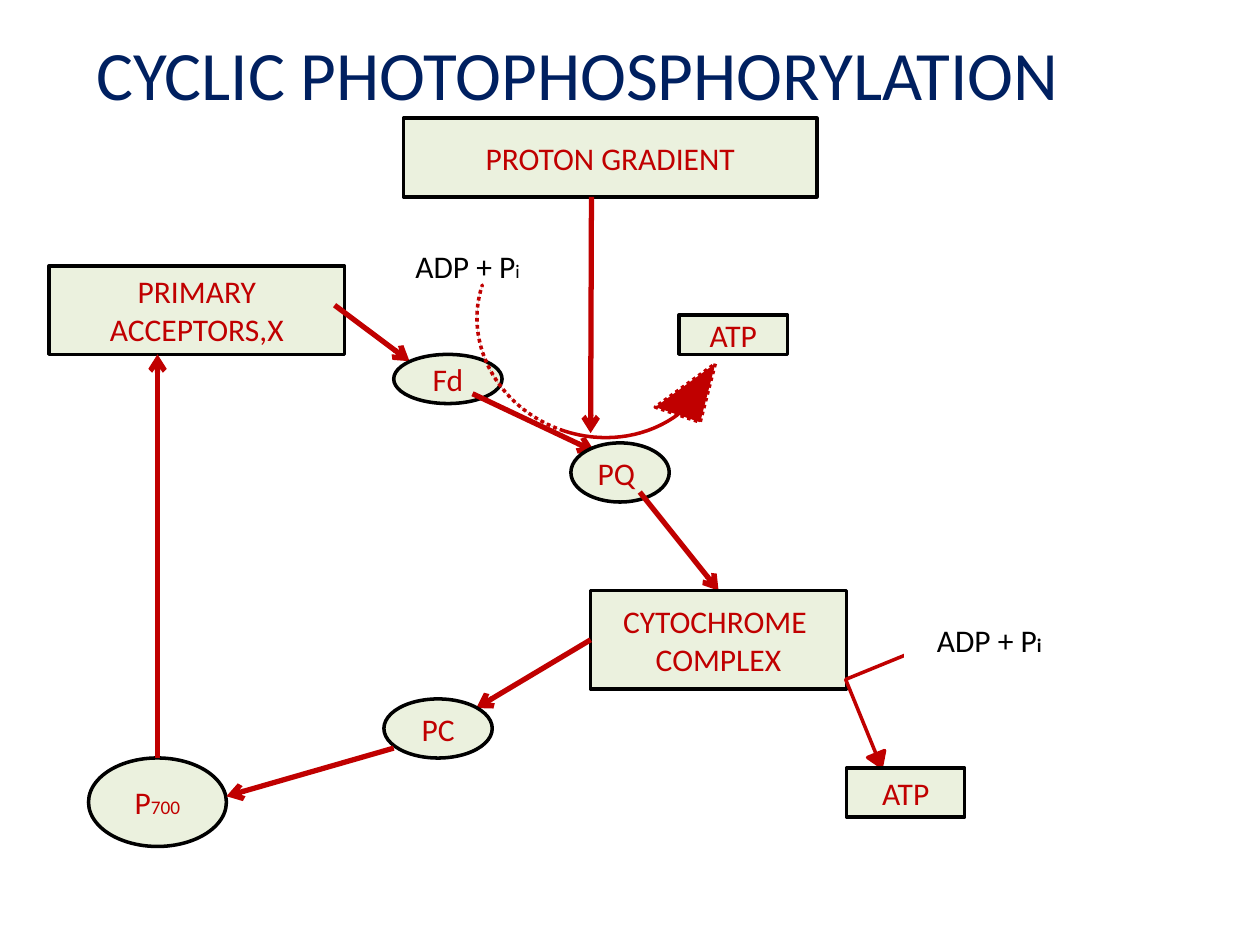
from lxml import etree
from pptx import Presentation
from pptx.dml.color import RGBColor
from pptx.enum import dml, shapes, text
from pptx.oxml import ns
from pptx.util import Pt

COLORS = {"navy": "002060", "red": "C00000", "cream": "EBF1DE",
          "black": "000000", "white": "FFFFFF"}
RGB = {name: RGBColor.from_string(value) for name, value in COLORS.items()}
KIND = shapes.MSO_SHAPE

prs = Presentation()
prs.slide_width, prs.slide_height = Pt(720), Pt(540)
s = prs.slides.add_slide(prs.slide_layouts[5])


def add_node(kind, box, lines=(), small="", fill="cream", line="black", ink="red"):
    """Add a filled shape with centred lines and an optional small suffix."""
    sp = s.shapes.add_shape(kind, *map(Pt, box))
    sp.shadow.inherit = False
    sp.fill.solid()
    sp.fill.fore_color.rgb = RGB[fill]
    sp.line.color.rgb = RGB[line]
    sp.line.width = Pt(2)
    tf = sp.text_frame
    tf.vertical_anchor = text.MSO_ANCHOR.MIDDLE
    tf.text = "\n".join(lines)
    for p in tf.paragraphs:
        p.alignment = text.PP_ALIGN.CENTER
    if small:
        p.add_run().text = small
    for p in tf.paragraphs:
        for i, r in enumerate(p.runs):
            r.font.name = "Calibri"
            r.font.size = Pt(11 if i else 18)
            r.font.color.rgb = RGB[ink]
    return sp


def add_arrow(x1, y1, x2, y2):
    c = s.shapes.add_connector(shapes.MSO_CONNECTOR.STRAIGHT, *map(Pt, (x1, y1, x2, y2)))
    c.line.color.rgb = RGB["red"]
    c.line.width = Pt(3)
    etree.SubElement(c.line._get_or_add_ln(), ns.qn("a:tailEnd"), type="arrow")
    etree.SubElement(c._element.spPr, ns.qn("a:effectLst"))
    return c


title = s.shapes.title
title.left, title.top, title.width, title.height = map(Pt, (36, 21.6, 588.2, 40.3))
title.text_frame.text = "CYCLIC PHOTOPHOSPHORYLATION"
title.text_frame.vertical_anchor = text.MSO_ANCHOR.MIDDLE
p = title.text_frame.paragraphs[0]
p.alignment = text.PP_ALIGN.CENTER
p.runs[0].font.name = "Calibri"
p.runs[0].font.size = Pt(39.6)
p.runs[0].font.color.rgb = RGB["navy"]

# Electron path, in drawing order
add_node(KIND.RECTANGLE, (28.1, 151.9, 168.8, 50.6), ["PRIMARY", "ACCEPTORS,X"])
p700 = add_node(KIND.OVAL, (50.6, 433.1, 78.8, 50.6), ["P"], "700")
add_arrow(191.2, 174.4, 234, 206.4)
add_node(KIND.OVAL, (225, 202.5, 61.9, 28.1), ["Fd"])
add_arrow(270, 225, 339.8, 258)
add_arrow(90, 433.1, 90, 202.5).begin_connect(p700, 0)
pq = add_node(KIND.OVAL, (326.2, 253.1, 56.2, 33.8), ["PQ"])
pq.text_frame.paragraphs[0].alignment = text.PP_ALIGN.LEFT
to_cytochrome = add_arrow(365.6, 281.2, 410.6, 337.5)
cytochrome = add_node(KIND.RECTANGLE, (337.5, 337.5, 146.2, 56.2), ["CYTOCHROME ", "COMPLEX"])
to_cytochrome.end_connect(cytochrome, 0)
add_arrow(337.5, 365.6, 272.2, 404.6).begin_connect(cytochrome, 1)
add_node(KIND.OVAL, (219.4, 399.4, 61.9, 33.8), ["PC"])
add_arrow(225, 427.5, 129.4, 455)

# Proton gradient and ATP formation
add_node(KIND.RECTANGLE, (230.6, 67.5, 236.2, 45), ["PROTON GRADIENT"])
add_arrow(338, 112.5, 337.5, 247.5)
add_node(KIND.RECTANGLE, (388.1, 180, 61.9, 22.5), ["ATP"])
plain = dict(fill="white", line="white", ink="black")
add_node(KIND.RECTANGLE, (219.4, 140.6, 95.6, 22.5), ["ADP + P"], "i", **plain)

curve = add_node(KIND.CURVED_UP_ARROW, (261.4, 185.8, 154.1, 64.1), fill="red", line="red")
curve.line.dash_style = dml.MSO_LINE.ROUND_DOT
bend = add_node(KIND.BENT_UP_ARROW, (486.7, 378.7, 50.4, 54), fill="red", line="red")
for sp, angle, values in ((curve, 18.6, (0, 0.423, 0.54)),
                          (bend, 157.8, (0, 0.104, 0.158))):
    sp.rotation = angle
    for i, value in enumerate(values):
        sp.adjustments[i] = value

adp = add_node(KIND.RECTANGLE, (517.5, 354.4, 95.6, 22.5), ["ADP + P"], "i", **plain)
adp.text_frame.paragraphs[0].runs[1].font.bold = True
add_node(KIND.RECTANGLE, (483.8, 438.8, 67.5, 28.1), ["ATP"])

prs.save("out.pptx")
